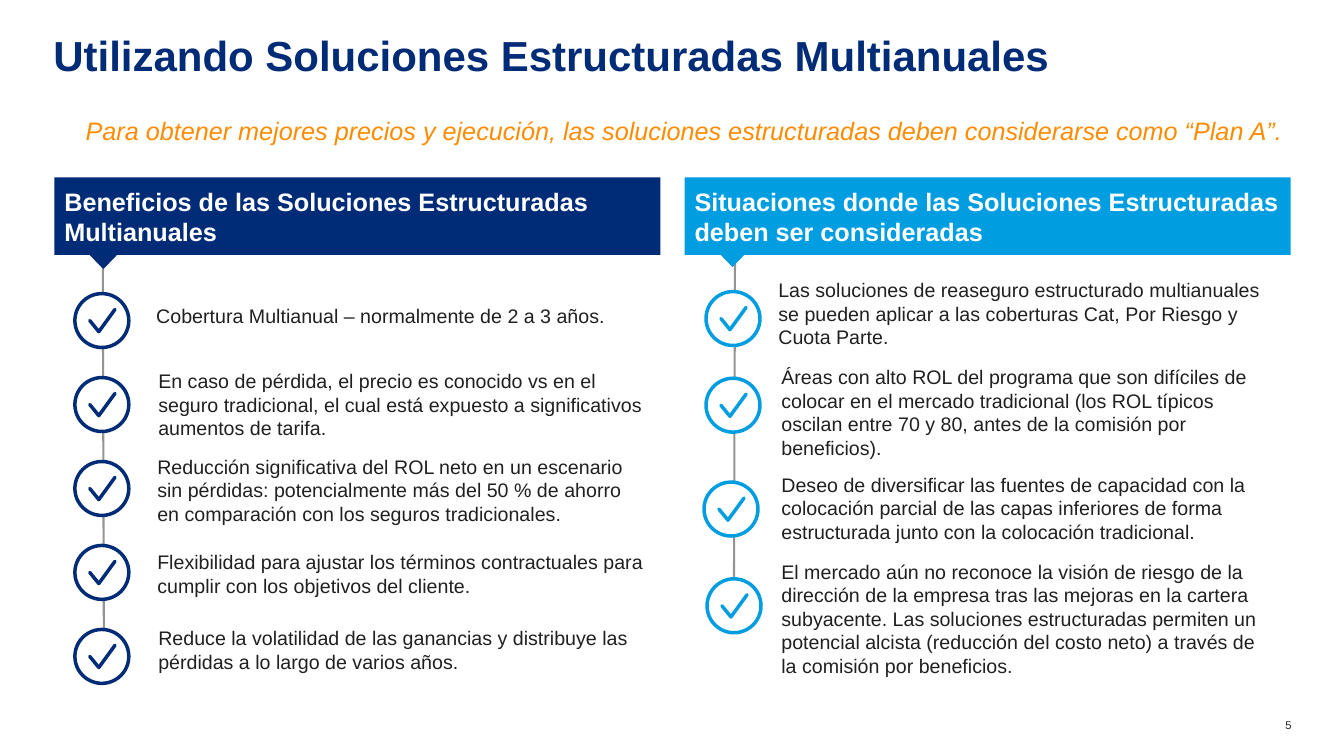
from lxml import etree
from pptx import Presentation
from pptx.dml.color import RGBColor
from pptx.enum.shapes import MSO_CONNECTOR, MSO_SHAPE
from pptx.enum.text import MSO_ANCHOR, PP_ALIGN
from pptx.oxml.ns import qn
from pptx.util import Inches, Pt

LEFT, CENTER, RIGHT = PP_ALIGN.LEFT, PP_ALIGN.CENTER, PP_ALIGN.RIGHT
TOP, MIDDLE = MSO_ANCHOR.TOP, MSO_ANCHOR.MIDDLE
RECTANGLE, TRIANGLE, OVAL = MSO_SHAPE.RECTANGLE, MSO_SHAPE.ISOSCELES_TRIANGLE, MSO_SHAPE.OVAL
STRAIGHT = MSO_CONNECTOR.STRAIGHT

NAVY, SKY, ORANGE = "002C77", "009DE0", "FF8C00"
INK, GRAY, WHITE = "202020", "949494", "FFFFFF"

TITLE = "Utilizando Soluciones Estructuradas Multianuales"
SUBTITLE = ("Para obtener mejores precios y ejecución, las soluciones estructuradas "
            "deben considerarse como “Plan A”.")
PAGE_NUMBER = "5"

CHECK_START = 3.18
CHECK_PITCH = 0.833
LEFT_CHECKS = [(1.01, CHECK_START + CHECK_PITCH * row) for row in range(5)]
RIGHT_CHECKS = [(7.27, 3.16), (7.27, 4.02), (7.25, 5.05), (7.28, 6.01)]

COLUMNS = [
    {
        "heading": "Beneficios de las Soluciones Estructuradas Multianuales",
        "color": NAVY,
        "left": 0.54,
        "pointer": (0.89, 2.53),
        "line": (1.02, 2.67, 1.03, 6.25),
        "checks": LEFT_CHECKS,
        "items": [
            (1.55, 3.02, 5, 0.24, "Cobertura Multianual – normalmente de 2 a 3 años."),
            (1.57, 3.66, 4.83, 0.71,
             "En caso de pérdida, el precio es conocido vs en el seguro tradicional, "
             "el cual está expuesto a significativos aumentos de tarifa."),
            (1.56, 4.51, 4.85, 0.94,
             "Reducción significativa del ROL neto en un escenario sin pérdidas: "
             "potencialmente más del 50 % de ahorro en comparación con los seguros "
             "tradicionales."),
            (1.56, 5.46, 4.85, 0.71,
             "Flexibilidad para ajustar los términos contractuales para cumplir con "
             "los objetivos del cliente."),
            (1.57, 6.21, 5, 0.47,
             "Reduce la volatilidad de las ganancias y distribuye las pérdidas a lo "
             "largo de varios años."),
        ],
    },
    {
        "heading": "Situaciones donde las Soluciones Estructuradas deben ser consideradas",
        "color": SKY,
        "left": 6.79,
        "pointer": (7.13, 2.51),
        "line": (7.29, 2.52, 7.28, 5.73),
        "checks": RIGHT_CHECKS,
        "items": [
            (7.72, 2.76, 4.83, 0.71,
             "Las soluciones de reaseguro estructurado multianuales se pueden aplicar "
             "a las coberturas Cat, Por Riesgo y Cuota Parte."),
            (7.75, 3.62, 4.83, 0.94,
             "Áreas con alto ROL del programa que son difíciles de colocar en el "
             "mercado tradicional (los ROL típicos oscilan entre 70 y 80, antes de la "
             "comisión por beneficios)."),
            (7.75, 4.69, 4.83, 0.71,
             "Deseo de diversificar las fuentes de capacidad con la colocación parcial "
             "de las capas inferiores de forma estructurada junto con la colocación "
             "tradicional."),
            (7.75, 5.55, 4.83, 1.18,
             "El mercado aún no reconoce la visión de riesgo de la dirección de la "
             "empresa tras las mejoras en la cartera subyacente. Las soluciones "
             "estructuradas permiten un potencial alcista (reducción del costo neto) "
             "a través de la comisión por beneficios."),
        ],
    },
]

RING_SIZE = 0.535
STROKE = 2.5
TICK = [(-0.12, 0), (-0.03, 0.11), (0.13, -0.11)]


def rgb(color):
    return RGBColor.from_string(color)


def write(shape, text, size, color, bold=False, italic=False, align=LEFT, anchor=TOP):
    frame = shape.text_frame
    frame.text = text
    frame.word_wrap = True
    frame.vertical_anchor = anchor
    paragraph = frame.paragraphs[0]
    paragraph.alignment = align
    font = paragraph.runs[0].font
    font.name, font.size, font.bold, font.italic = "Arial", Pt(size), bold, italic
    font.color.rgb = rgb(color)
    return paragraph


def add_label(slide, box, text, size, color, inset=0, **style):
    label = slide.shapes.add_textbox(*map(Inches, box))
    frame = label.text_frame
    frame.margin_left = frame.margin_right = Inches(inset)
    frame.margin_top = frame.margin_bottom = Inches(inset / 2)
    return write(label, text, size, color, **style)


def add_filled(slide, kind, box, color):
    shape = slide.shapes.add_shape(kind, *map(Inches, box))
    shape.shadow.inherit = False
    shape.fill.solid()
    shape.fill.fore_color.rgb = rgb(color)
    shape.line.fill.background()
    return shape


def outline(shape, color, width):
    shape.line.color.rgb = rgb(color)
    shape.line.width = Pt(width)


def add_check(slide, x, y, color):
    corner = RING_SIZE / 2
    ring = add_filled(slide, OVAL, (x - corner, y - corner, RING_SIZE, RING_SIZE), WHITE)
    outline(ring, color, STROKE)
    points = [(Inches(x + dx), Inches(y + dy)) for dx, dy in TICK]
    builder = slide.shapes.build_freeform(*points[0])
    builder.add_line_segments(points[1:], close=False)
    tick = builder.convert_to_shape()
    tick.shadow.inherit = False
    tick.fill.background()
    outline(tick, color, STROKE)
    stroke = tick.element.spPr.find(qn("a:ln"))
    stroke.set("cap", "rnd")
    etree.SubElement(stroke, qn("a:round"))


def add_column(slide, column):
    color = column["color"]
    line = slide.shapes.add_connector(STRAIGHT, *map(Inches, column["line"]))
    outline(line, GRAY, 1.5)
    etree.SubElement(line.element.spPr, qn("a:effectLst"))
    header = add_filled(slide, RECTANGLE, (column["left"], 1.76, 6.01, 0.77), color)
    write(header, column["heading"], 18, WHITE, bold=True, anchor=MIDDLE)
    pointer = add_filled(slide, TRIANGLE, (*column["pointer"], 0.27, 0.14), color)
    pointer.rotation = 180
    for x, y in column["checks"]:
        add_check(slide, x, y, color)
    for *box, text in column["items"]:
        add_label(slide, box, text, 14, INK)


def main():
    presentation = Presentation()
    presentation.slide_width = Inches(13.33)
    presentation.slide_height = Inches(7.5)
    slide = presentation.slides.add_slide(presentation.slide_layouts[6])
    title = add_label(slide, (0.53, 0.39, 12.27, 0.54), TITLE, 30, NAVY, bold=True)
    title.line_spacing = 0.8
    add_label(slide, (0.65, 1.09, 12.27, 0.4), SUBTITLE, 18, ORANGE,
              inset=0.1, italic=True, align=CENTER)
    for column in COLUMNS:
        add_column(slide, column)
    add_label(slide, (12.5, 7.13, 0.31, 0.13), PAGE_NUMBER, 8, INK, align=RIGHT)
    presentation.save("out.pptx")


if __name__ == "__main__":
    main()
